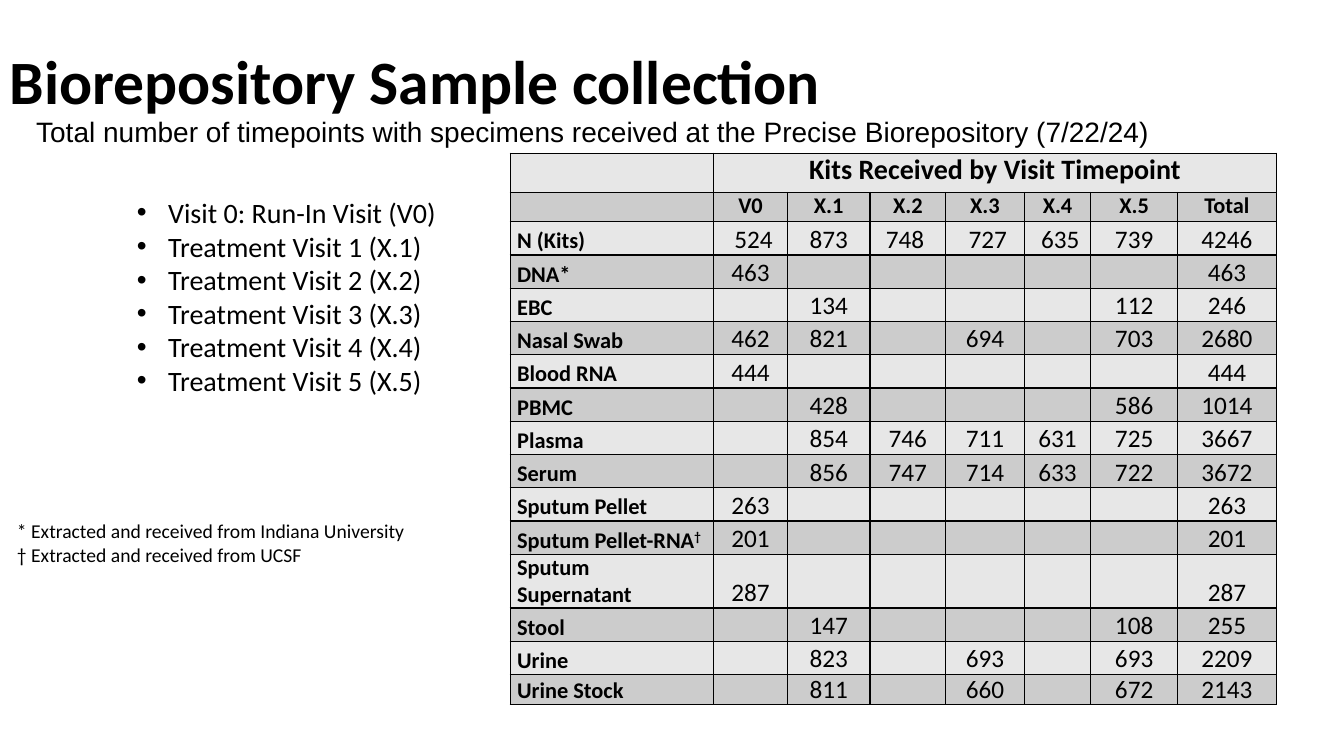
from lxml import etree
from pptx import Presentation
from pptx.dml.color import RGBColor
from pptx.enum.text import MSO_ANCHOR, MSO_AUTO_SIZE, PP_ALIGN
from pptx.oxml.ns import qn
from pptx.util import Inches, Pt

BLACK = RGBColor(0x00, 0x00, 0x00)
LIGHT_GREY = RGBColor(0xE7, 0xE7, 0xE7)
MID_GREY = RGBColor(0xCC, 0xCC, 0xCC)
TOP, MIDDLE, BOTTOM = MSO_ANCHOR.TOP, MSO_ANCHOR.MIDDLE, MSO_ANCHOR.BOTTOM
LEFT, CENTER = PP_ALIGN.LEFT, PP_ALIGN.CENTER
GROW = MSO_AUTO_SIZE.SHAPE_TO_FIT_TEXT

VISITS = ["Visit 0: Run-In Visit (V0)"] + [f"Treatment Visit {n} (X.{n})" for n in range(1, 6)]
FOOTNOTES = ["* Extracted and received from Indiana University",
             "† Extracted and received from UCSF"]
COLUMN_WIDTHS = [2.02, 0.73, 0.82, 0.75, 0.78, 0.66, 0.86, 0.98]
ROW_HEIGHTS = [0.39, 0.29] + [0.33] * 13 + [0.23]
KITS = [
    ["", "Kits Received by Visit Timepoint", "", "", "", "", "", ""],
    ["", "V0", "X.1", "X.2", "X.3", "X.4", "X.5", "Total"],
    ["N (Kits)", " 524", "873", "748 ", " 727", " 635", "739", "4246"],
    ["DNA*", "463", "", "", "", "", "", "463"],
    ["EBC", "", "134", "", "", "", "112", "246"],
    ["Nasal Swab", "462", "821", "", "694", "", "703", "2680"],
    ["Blood RNA", "444", "", "", "", "", "", "444"],
    ["PBMC", "", "428", "", "", "", "586", "1014"],
    ["Plasma", "", "854", "746", "711", "631", "725", "3667"],
    ["Serum", "", "856", "747", "714", "633", "722", "3672"],
    ["Sputum Pellet", "263", "", "", "", "", "", "263"],
    ["Sputum Pellet-RNA†", "201", "", "", "", "", "", "201"],
    ["Sputum Supernatant", "287", "", "", "", "", "", "287"],
    ["Stool", "", "147", "", "", "", "108", "255"],
    ["Urine", "", "823", "", "693", "", "693", "2209"],
    ["Urine Stock", "", "811", "", "660", "", "672", "2143"],
]


class SlideBuilder:
    def __init__(self, slide, font="Calibri", color=BLACK):
        self.slide = slide
        self.font = font
        self.color = color

    def style_run(self, run, size, bold=False, font=None):
        run.font.name = font or self.font
        run.font.size = Pt(size)
        run.font.bold = bold
        run.font.color.rgb = self.color

    def text(self, box, lines, size, bold=False, font=None, wrap=True,
             anchor=TOP, auto_size=GROW, line_spacing=None, bulleted=False):
        shape = self.slide.shapes.add_textbox(*(Inches(length) for length in box))
        frame = shape.text_frame
        frame.text = "\n".join(lines)
        frame.word_wrap = wrap
        frame.auto_size = auto_size
        frame.vertical_anchor = anchor
        for paragraph in frame.paragraphs:
            if bulleted:
                self.add_bullet(paragraph)
            if line_spacing:
                paragraph.line_spacing = line_spacing
            self.style_run(paragraph.runs[0], size, bold, font)

    def add_bullet(self, paragraph):
        properties = paragraph._p.get_or_add_pPr()
        properties.set("marL", str(Inches(1.57)))
        properties.set("indent", str(Inches(-0.31)))
        etree.SubElement(properties, qn("a:buFont"), typeface="Arial")
        etree.SubElement(properties, qn("a:buChar"), char="•")

    def add_borders(self, cell):
        """Put a 1 pt line on all four sides, ahead of the cell's fill."""
        properties = cell._tc.get_or_add_tcPr()
        for position, side in enumerate(("lnL", "lnR", "lnT", "lnB")):
            line = etree.Element(qn(f"a:{side}"), w=str(Pt(1)))
            fill = etree.SubElement(line, qn("a:solidFill"))
            etree.SubElement(fill, qn("a:srgbClr"), val=str(self.color))
            properties.insert(position, line)

    def cell(self, cell, text, size, bold, align, anchor, fill):
        cell.margin_left = cell.margin_right = Inches(0.07)
        cell.margin_top = cell.margin_bottom = 0
        cell.vertical_anchor = anchor
        cell.fill.solid()
        cell.fill.fore_color.rgb = fill
        self.add_borders(cell)
        paragraph = cell.text_frame.paragraphs[0]
        paragraph.alignment = align
        if not text:
            etree.SubElement(paragraph._p, qn("a:endParaRPr"), sz=str(size * 100))
            return
        label, dagger, _ = text.partition("†")
        paragraph.text = label
        if dagger:
            paragraph.add_run().text = dagger
            paragraph.runs[1].font._element.set("baseline", "30000")
        for run in paragraph.runs:
            self.style_run(run, size, bold)

    def kits_table(self, left, top):
        table = self.slide.shapes.add_table(
            len(KITS), len(COLUMN_WIDTHS), Inches(left), Inches(top),
            Inches(sum(COLUMN_WIDTHS)), Inches(sum(ROW_HEIGHTS))).table
        for column, width in zip(table.columns, COLUMN_WIDTHS):
            column.width = Inches(width)
        for row, height in zip(table.rows, ROW_HEIGHTS):
            row.height = Inches(height)
        for r, values in enumerate(KITS):
            fill = MID_GREY if r % 2 else LIGHT_GREY
            for c, value in enumerate(values):
                heading = r < 2
                label = heading or c == 0
                size = 20 if r == 0 else 16 if label else 18
                self.cell(table.cell(r, c), value, size, label,
                          LEFT if c == 0 else CENTER,
                          TOP if heading else BOTTOM, fill)
        table.cell(0, 1).merge(table.cell(0, len(COLUMN_WIDTHS) - 1))


def main():
    presentation = Presentation()
    presentation.slide_width = Inches(13.33)
    presentation.slide_height = Inches(7.5)
    builder = SlideBuilder(presentation.slides.add_slide(presentation.slide_layouts[6]))
    builder.text((0.26, 1.09, 11.32, 0.44),
                 ["Total number of timepoints with specimens received at the "
                  "Precise Biorepository (7/22/24)"],
                 20, font="Arial", wrap=False)
    builder.kits_table(5.06, 1.52)
    builder.text((0, 1.89, 4.6, 2.46), VISITS, 20, wrap=False, bulleted=True)
    builder.text((0, 0.11, 13.14, 1.45), ["Biorepository Sample collection"], 44, bold=True,
                 anchor=MIDDLE, auto_size=MSO_AUTO_SIZE.NONE, line_spacing=0.9)
    builder.text((0.07, 5.1, 4.07, 0.57), FOOTNOTES, 14)
    presentation.save("out.pptx")


if __name__ == "__main__":
    main()
